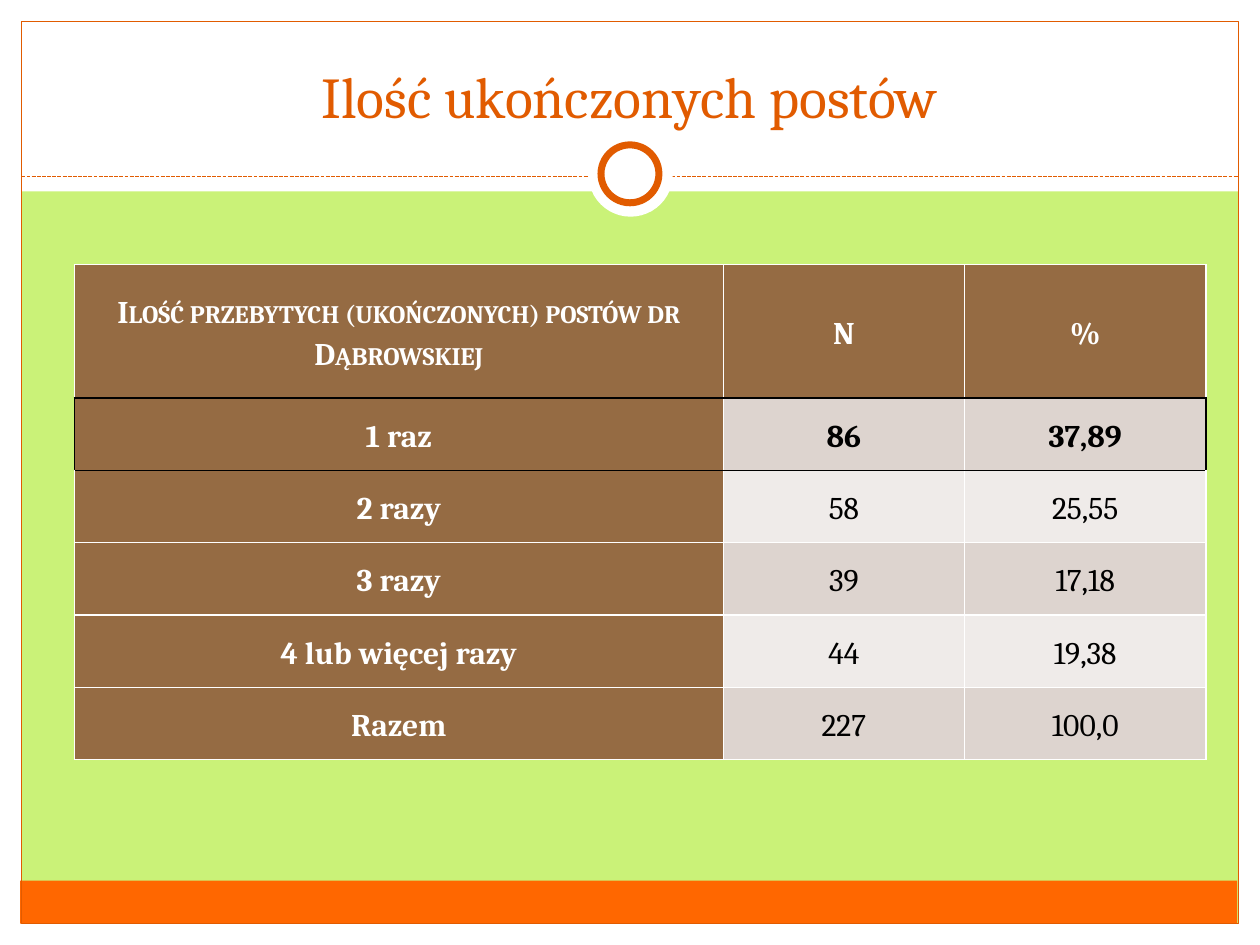
from lxml import etree
from pptx import Presentation
from pptx.dml.color import RGBColor
from pptx.enum.dml import MSO_LINE
from pptx.enum.shapes import MSO_CONNECTOR, MSO_SHAPE
from pptx.enum.text import MSO_ANCHOR, PP_ALIGN
from pptx.oxml.ns import qn
from pptx.util import Inches, Pt

RECTANGLE, OVAL = MSO_SHAPE.RECTANGLE, MSO_SHAPE.OVAL
STRAIGHT, DASH = MSO_CONNECTOR.STRAIGHT, MSO_LINE.SQUARE_DOT
CENTER, MIDDLE, BOTTOM = PP_ALIGN.CENTER, MSO_ANCHOR.MIDDLE, MSO_ANCHOR.BOTTOM

COLORS = {
    "background": "CAF278",
    "white": "FFFFFF",
    "black": "000000",
    "accent": "E15B00",
    "footer": "FF6700",
    "header": "956B43",
    "odd": "DDD4CF",
    "even": "EFEBE9",
}


def rgb(name):
    return RGBColor.from_string(COLORS[name])


def write_text(frame, text, size=18, color="black", bold=False,
               small_caps=False, spacing=None):
    paragraph = frame.paragraphs[0]
    paragraph.alignment = CENTER
    paragraph.line_spacing = spacing
    run = paragraph.add_run()
    run.text = text
    run.font.name = "Cambria"
    run.font.size = Pt(size)
    run.font.bold = bold
    run.font.color.rgb = rgb(color)
    if small_caps:
        run._r.get_or_add_rPr().set("cap", "small")


deck = Presentation()
deck.slide_width, deck.slide_height = Inches(10), Inches(7.5)
slide = deck.slides.add_slide(deck.slide_layouts[6])
slide.background.fill.solid()
slide.background.fill.fore_color.rgb = rgb("background")

# Margins, frame, divider and ring, from back to front:
# preset (None for the divider line), left, top, width, height, fill, line width
decorations = [
    (RECTANGLE, 0, 7.33, 10, 0.17, "white", 0),
    (RECTANGLE, 0, 0, 10, 1.52, "white", 0),
    (RECTANGLE, 0, 0, 0.17, 7.5, "white", 0),
    (RECTANGLE, 9.83, 0, 0.17, 7.5, "white", 0),
    (RECTANGLE, 0.16, 6.99, 9.66, 0.34, "footer", 0),
    (RECTANGLE, 0.17, 0.17, 9.66, 7.16, None, 0.75),
    (None, 0.17, 1.4, 9.66, 0, None, 0.75),
    (OVAL, 4.67, 1.05, 0.67, 0.67, "white", 0),
    (OVAL, 4.77, 1.15, 0.46, 0.46, "white", 4),
]
for preset, left, top, width, height, fill, line_width in decorations:
    if preset is None:
        part = slide.shapes.add_connector(
            STRAIGHT, Inches(left), Inches(top),
            Inches(left + width), Inches(top + height))
        part.line.dash_style = DASH
    else:
        part = slide.shapes.add_shape(
            preset, Inches(left), Inches(top), Inches(width), Inches(height))
        part.shadow.inherit = False
        if fill:
            part.fill.solid()
            part.fill.fore_color.rgb = rgb(fill)
        else:
            part.fill.background()
    if line_width:
        part.line.color.rgb = rgb("accent")
        part.line.width = Pt(line_width)
    else:
        part.line.fill.background()
    if preset is None:
        etree.SubElement(part._element.spPr, qn("a:effectLst"))

title = slide.shapes.add_textbox(
    Inches(0.33), Inches(0.25), Inches(9.33), Inches(0.83)).text_frame
title.word_wrap = True
title.vertical_anchor = BOTTOM
write_text(title, "Ilość ukończonych postów", size=33, color="accent")

fasts = [
    ("Ilość przebytych (ukończonych) postów dr Dąbrowskiej", "N", "%"),
    ("1 raz", "86", "37,89"),
    ("2 razy", "58", "25,55"),
    ("3 razy", "39", "17,18"),
    ("4 lub więcej razy", "44", "19,38"),
    ("Razem", "227", "100,0"),
]
table_width, label_width = 8.98, 5.15
table_height, header_height = 3.93, 1.06
column_widths = [label_width] + [(table_width - label_width) / 2] * 2
row_heights = [header_height] + [(table_height - header_height) / 5] * 5
highlighted = 1
last_column = len(column_widths) - 1

table = slide.shapes.add_table(
    len(fasts), len(column_widths), Inches(0.59), Inches(2.1),
    Inches(table_width), Inches(table_height)).table
for column, width in zip(table.columns, column_widths):
    column.width = Inches(width)
for row, height in zip(table.rows, row_heights):
    row.height = Inches(height)

for r, values in enumerate(fasts):
    for c, value in enumerate(values):
        cell = table.cell(r, c)
        cell.margin_left = cell.margin_right = Inches(0.07)
        cell.margin_top = cell.margin_bottom = 0
        cell.vertical_anchor = MIDDLE

        # The highlighted row is boxed in black, all other edges are white
        black_edges = {
            "lnL": r == highlighted and c == 0,
            "lnR": r == highlighted and c == last_column,
            "lnT": r in (highlighted, highlighted + 1),
            "lnB": r in (highlighted - 1, highlighted),
        }
        properties = cell._tc.get_or_add_tcPr()
        for edge, is_black in black_edges.items():
            border = etree.SubElement(properties, qn(f"a:{edge}"), w=str(Pt(1)))
            paint = etree.SubElement(border, qn("a:solidFill"))
            etree.SubElement(paint, qn("a:srgbClr"),
                             val=COLORS["black" if is_black else "white"])

        is_header = r == 0 or c == 0
        band = "odd" if r % 2 else "even"
        cell.fill.solid()
        cell.fill.fore_color.rgb = rgb("header" if is_header else band)
        write_text(cell.text_frame, value,
                   color="white" if is_header else "black",
                   bold=is_header or r == highlighted,
                   small_caps=r == 0 and c == 0, spacing=1.15)

deck.save("out.pptx")
